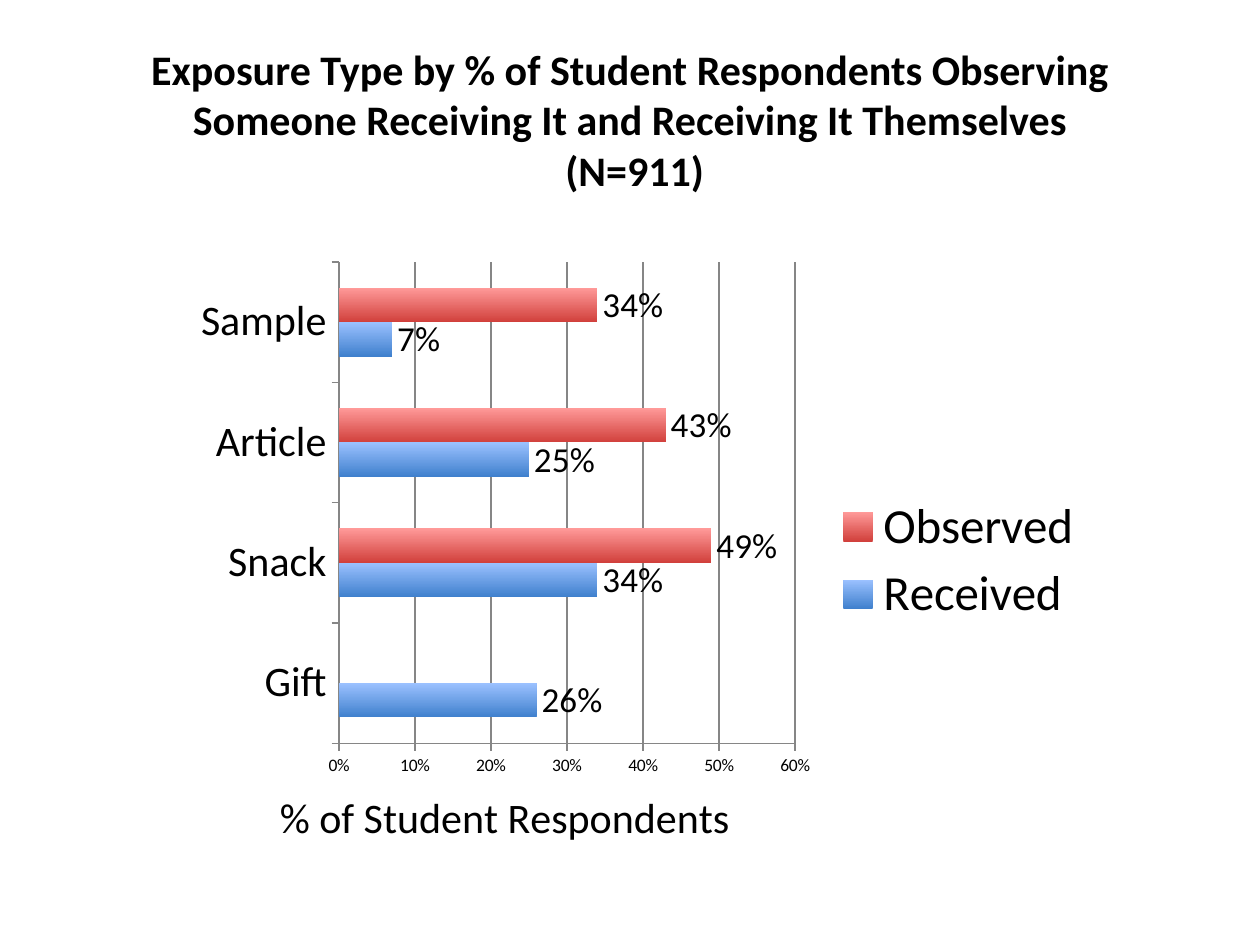
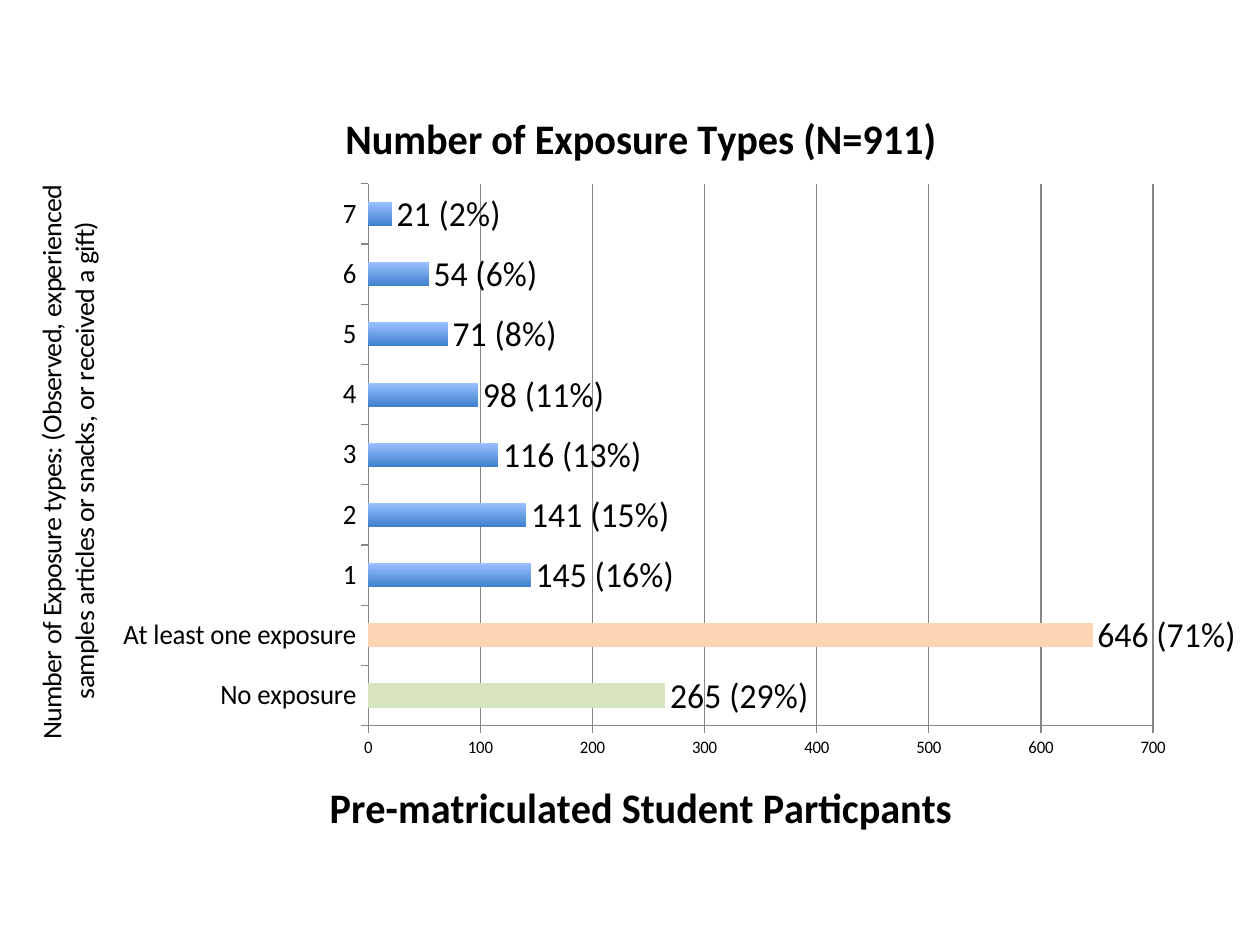
from lxml import etree
from pptx import Presentation
from pptx import util as u
from pptx.chart.data import CategoryChartData
from pptx.dml.color import RGBColor
from pptx.enum import chart as ch, text
from pptx.oxml import parse_xml
from pptx.oxml.ns import nsdecls, qn

# Shared style
FONT = "Calibri"
BLACK = RGBColor(0x00, 0x00, 0x00)
AXIS_GREY = RGBColor(0x86, 0x86, 0x86)
BLUE = (RGBColor(0x3F, 0x80, 0xCD), RGBColor(0x9B, 0xC1, 0xFF))
RED = (RGBColor(0xD1, 0x40, 0x3C), RGBColor(0xFF, 0x9A, 0x99))
GREEN = RGBColor(0xD7, 0xE4, 0xBD)
PEACH = RGBColor(0xFC, 0xD5, 0xB5)
TITLE_SIZE, LABEL_SIZE, TICK_SIZE = 24, 20, 10

# Content: exposure by type
TYPE_TITLE = ("Exposure Type by % of Student Respondents Observing "
              "Someone Receiving It and Receiving It Themselves\v (N=911)")
TYPES = ["Gift", "Snack", "Article", "Sample"]
TYPE_SERIES = [("Received", [0.26, 0.34, 0.25, 0.07], BLUE),
               ("Observed", [None, 0.49, 0.43, 0.34], RED)]
TYPE_AXIS = ["% of Student Respondents"]

# Content: number of exposure types (category, students, percent)
COUNT_TITLE = ["Number of Exposure Types (N=911)"]
COUNTS = [("No exposure", 265, 29), ("At least one exposure", 646, 71),
          ("1", 145, 16), ("2", 141, 15), ("3", 116, 13), ("4", 98, 11),
          ("5", 71, 8), ("6", 54, 6), ("7", 21, 2)]
COUNT_COLOURS = [GREEN, PEACH]
COUNT_AXIS = ["Pre-matriculated Student Particpants"]
COUNT_CATEGORY_AXIS = ["Number of Exposure types: (Observed, experienced",
                       "samples articles or snacks, or received a gift)"]

# Chart frames on the slide, in inches: left, top, width, height
TYPE_FRAME = (1.44, 1.98, 7.28, 4.95)
COUNT_FRAME = (0.23, 0.64, 9.58, 6.09)


def style_font(font, size, bold=False):
    font.name, font.size, font.bold = FONT, u.Pt(size), bold
    font.color.rgb = BLACK


def place(element, frame, spot):
    """Fix a chart part at a spot given in slide inches: left, top[, width, height]."""
    left, top, width, height = frame
    shares = [(spot[0] - left) / width, (spot[1] - top) / height]
    if len(spot) == 4:
        shares += [spot[2] / width, spot[3] / height]
    for old in element.findall(qn("c:layout")):
        element.remove(old)
    layout = parse_xml(f"<c:layout {nsdecls('c')}><c:manualLayout/></c:layout>")
    manual = layout[0]
    is_plot = element.tag == qn("c:plotArea")
    if is_plot:
        etree.SubElement(manual, qn("c:layoutTarget")).set("val", "inner")
    for mode in ("xMode", "yMode"):
        etree.SubElement(manual, qn(f"c:{mode}")).set("val", "edge")
    for name, share in zip("xywh", shares):
        etree.SubElement(manual, qn(f"c:{name}")).set("val", f"{share:.4f}")
    overlay = element.find(qn("c:overlay"))
    if is_plot or overlay is None:
        element.insert(0 if is_plot else 1, layout)
    else:
        overlay.addprevious(layout)


def write_title(title, lines, size, bold, frame, spot, upright=False):
    body = title.text_frame
    body.text = "\n".join(lines)
    for para in body.paragraphs:
        para.alignment = text.PP_ALIGN.CENTER
        style_font(para.font, size, bold)
        for span in para.runs:
            style_font(span.font, size, bold)
    if upright:
        settings = title._element.find(".//" + qn("a:bodyPr"))
        settings.set("rot", "-5400000")
        settings.set("vert", "horz")
    place(title._element, frame, spot)


def shade(fill, dark, light):
    fill.gradient()
    fill.gradient_angle = 90
    for stop, colour in zip(fill.gradient_stops, (dark, light)):
        stop.color.rgb = colour


def add_bars(page, frame, categories, series, plot_spot, top, step, number, category_size):
    data = CategoryChartData(number_format=number)
    data.categories = categories
    for name, values, _ in series:
        data.add_series(name, values)
    chart = page.shapes.add_chart(ch.XL_CHART_TYPE.BAR_CLUSTERED,
                                  *map(u.Inches, frame), data).chart
    style_font(chart.font, TICK_SIZE)
    chart.has_title = chart.has_legend = False
    plot = chart.plots[0]
    plot.gap_width, plot.vary_by_categories = 150, False
    for bars, (_, _, colours) in zip(plot.series, series):
        shade(bars.format.fill, *colours)
        bars.invert_if_negative = False
        labels = bars.data_labels
        labels.show_value = True
        labels.number_format, labels.number_format_is_linked = number, False
        labels.position = ch.XL_LABEL_POSITION.OUTSIDE_END
        style_font(labels.font, LABEL_SIZE)
    # Axes
    values = chart.value_axis
    values.minimum_scale, values.maximum_scale, values.major_unit = 0, top, step
    values.has_major_gridlines = True
    values.major_gridlines.format.line.color.rgb = AXIS_GREY
    for axis, size in ((values, TICK_SIZE), (chart.category_axis, category_size)):
        axis.major_tick_mark = ch.XL_TICK_MARK.OUTSIDE
        axis.format.line.color.rgb = AXIS_GREY
        style_font(axis.tick_labels.font, size)
    values.tick_labels.number_format = number
    values.tick_labels.number_format_is_linked = False
    place(chart._chartSpace.chart.plotArea, frame, plot_spot)
    return chart


def build_type_page(page):
    # Heading
    box = page.shapes.add_textbox(*map(u.Inches, (0.5, 0.28, 9, 1.33)))
    body = box.text_frame
    body.word_wrap = True
    body.vertical_anchor = text.MSO_ANCHOR.MIDDLE
    body.text = TYPE_TITLE
    para = body.paragraphs[0]
    para.alignment = text.PP_ALIGN.CENTER
    for span in para.runs:
        style_font(span.font, TITLE_SIZE, True)
    # Chart
    chart = add_bars(page, TYPE_FRAME, TYPES, TYPE_SERIES,
                     (2.69, 2.08, 3.62, 3.82), 0.6, 0.1, "0%", TITLE_SIZE)
    write_title(chart.value_axis.axis_title, TYPE_AXIS, TITLE_SIZE, False,
                TYPE_FRAME, (2.16, 6.2))
    chart.has_legend = True
    legend = chart.legend
    legend.position = ch.XL_LEGEND_POSITION.RIGHT
    legend.include_in_layout = False
    style_font(legend.font, 28)
    place(legend._element, TYPE_FRAME, (6.62, 3.88, 1.97, 1.14))


def build_count_page(page):
    names, students, _ = zip(*COUNTS)
    chart = add_bars(page, COUNT_FRAME, names, [("Series 1", students, BLUE)],
                     (3.04, 1.46, 6.5, 4.3), 700, 100, "General", 16)
    bars = chart.plots[0].series[0]
    for index, colour in enumerate(COUNT_COLOURS):
        fill = bars.points[index].format.fill
        fill.solid()
        fill.fore_color.rgb = colour
    for index, (_, count, percent) in enumerate(COUNTS):
        label = bars.points[index].data_label
        label.text_frame.text = f"{count} ({percent}%)"
        style_font(label.text_frame.paragraphs[0].runs[0].font, LABEL_SIZE)
        label.position = ch.XL_LABEL_POSITION.OUTSIDE_END
    # Titles
    chart.has_title = True
    write_title(chart.chart_title, COUNT_TITLE, TITLE_SIZE, True,
                COUNT_FRAME, (2.79, 0.81))
    write_title(chart.value_axis.axis_title, COUNT_AXIS, TITLE_SIZE, True,
                COUNT_FRAME, (2.66, 6.12))
    write_title(chart.category_axis.axis_title, COUNT_CATEGORY_AXIS, 16, False,
                COUNT_FRAME, (0.24, 1.25), upright=True)


def main():
    deck = Presentation()
    deck.slide_width, deck.slide_height = u.Inches(10), u.Inches(7.5)
    for build in (build_type_page, build_count_page):
        build(deck.slides.add_slide(deck.slide_layouts[6]))
    deck.save("out.pptx")


if __name__ == "__main__":
    main()
